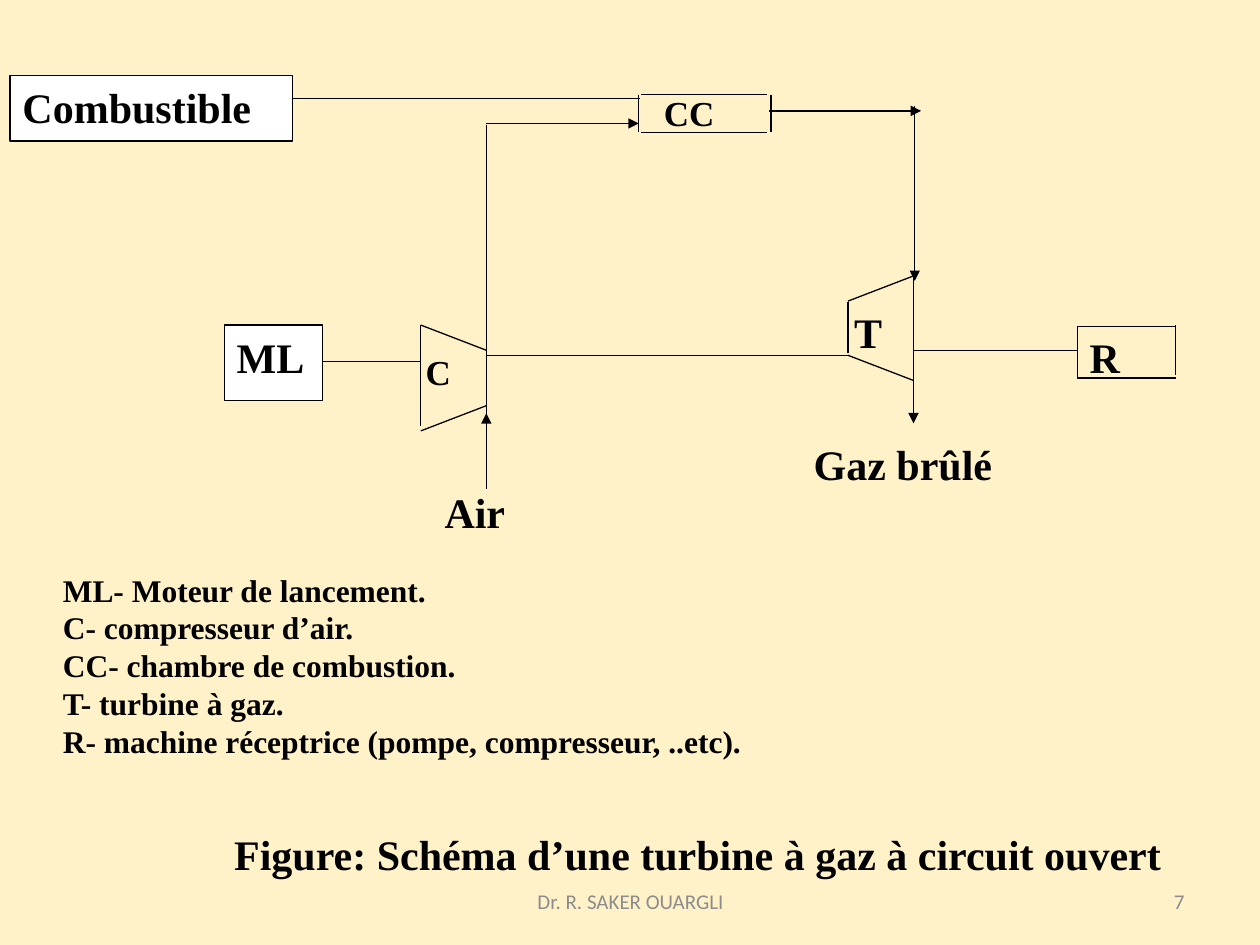
from lxml import etree
from pptx import Presentation
from pptx.dml.color import RGBColor
from pptx.enum.shapes import MSO_CONNECTOR, MSO_SHAPE
from pptx.enum.text import MSO_ANCHOR, PP_ALIGN
from pptx.oxml.ns import qn
from pptx.util import Inches, Pt

STRAIGHT = MSO_CONNECTOR.STRAIGHT
RECTANGLE = MSO_SHAPE.RECTANGLE
TOP, MIDDLE = MSO_ANCHOR.TOP, MSO_ANCHOR.MIDDLE
LEFT, CENTER, RIGHT = PP_ALIGN.LEFT, PP_ALIGN.CENTER, PP_ALIGN.RIGHT
BLACK, WHITE, GRAY, CREAM = "000000", "FFFFFF", "8C8C8C", "FFF2C9"
SERIF, SANS = "Times New Roman", "Calibri"
LEGEND = (
    "ML- Moteur de lancement.",
    "C- compresseur d’air.",
    "CC- chambre de combustion.",
    "T- turbine à gaz.",
    "R- machine réceptrice (pompe, compresseur, ..etc).",
)


def set_color(color_format, value):
    """Give a fill, line or font colour format a hex colour."""
    color_format.rgb = RGBColor.from_string(value)


def add_line(slide, start, end, arrow=False):
    """Draw a thin black line, with an arrowhead at its end if asked."""
    points = [Inches(value) for value in (*start, *end)]
    connector = slide.shapes.add_connector(STRAIGHT, *points)
    connector.line.width = Pt(0.75)
    set_color(connector.line.color, BLACK)
    if arrow:
        line = connector.line._get_or_add_ln()
        etree.SubElement(line, qn("a:tailEnd"), type="triangle")
    etree.SubElement(connector._element.spPr, qn("a:effectLst"))


def write_text(shape, lines, size=24, font=SERIF, color=BLACK, bold=True,
               align=LEFT, anchor=TOP, spacing=None):
    """Fill a shape with one paragraph per line."""
    frame = shape.text_frame
    frame.word_wrap = True
    frame.vertical_anchor = anchor
    frame.text = "\n".join(lines)
    for paragraph in frame.paragraphs:
        paragraph.alignment = align
        paragraph.line_spacing = spacing
        paragraph.font.name = font
        paragraph.font.size = Pt(size)
        paragraph.font.bold = bold
        set_color(paragraph.font.color, color)


def add_text(slide, box, *lines, **style):
    """Add a text box."""
    shape = slide.shapes.add_textbox(*(Inches(value) for value in box))
    write_text(shape, lines, **style)


def add_labelled_box(slide, box, label):
    """Add a white outlined rectangle with a label."""
    shape = slide.shapes.add_shape(RECTANGLE, *(Inches(value) for value in box))
    shape.shadow.inherit = False
    shape.fill.solid()
    set_color(shape.fill.fore_color, WHITE)
    shape.line.width = Pt(0.75)
    set_color(shape.line.color, BLACK)
    write_text(shape, [label])


def draw_trapezoid(slide, box, tall_on_right):
    """Draw the tall side and the two slanted sides of a machine."""
    left, top, width, height = box
    right, bottom = left + width, top + height
    tall, short = (right, left) if tall_on_right else (left, right)
    add_line(slide, (tall, top), (tall, bottom - 0.04))
    add_line(slide, (tall, top), (short, top + 0.2))
    add_line(slide, (tall, bottom), (short, bottom - 0.2))


def draw_compressor(slide, box):
    """Draw the compressor with its air inlet and outlet pipe."""
    left, top, width, height = box
    right, bottom = left + width, top + height
    draw_trapezoid(slide, box, tall_on_right=False)
    add_line(slide, (right, 0.99), (right, bottom - 0.03))
    add_line(slide, (right, bottom + 0.46), (right, bottom - 0.14), arrow=True)
    add_text(slide, (left - 0.06, top + 0.15, 0.78, 0.4), "C", size=20)
    add_text(slide, (left + 0.09, bottom + 0.39, 0.97, 0.6), "Air")


def draw_turbine(slide, box):
    """Draw the turbine with its burnt gas outlet."""
    left, top, width, height = box
    right, bottom = left + width, top + height
    draw_trapezoid(slide, box, tall_on_right=True)
    add_line(slide, (left, top + 0.21), (left, top + 0.61))
    add_line(slide, (right, bottom - 0.06), (right, bottom + 0.34), arrow=True)
    add_text(slide, (left - 0.05, top + 0.19, 0.78, 0.4), "T")
    add_text(slide, (left - 0.37, bottom + 0.41, 1.97, 0.6), "Gaz brûlé")


def draw_chamber(slide, box):
    """Draw the combustion chamber, its sides set apart from its ends."""
    left, top, width, height = box
    right, bottom = left + width, top + height
    for y in (top, bottom):
        add_line(slide, (left + 0.02, y), (right - 0.03, y))
    for x in (left, right):
        add_line(slide, (x, top), (x, bottom))
    add_text(slide, (left + 0.1, top - 0.07, 0.95, 0.4), "CC", size=20)


def draw_receiver(slide, box):
    """Draw the driven machine."""
    left, top, width, height = box
    right, bottom = left + width, top + height
    for y in (top, bottom):
        add_line(slide, (left, y), (right, y))
    add_line(slide, (left, top), (left, bottom - 0.01))
    add_line(slide, (right, top - 0.01), (right, bottom - 0.02))
    add_text(slide, (left, top - 0.01, width, 0.4), "R")


def draw_pipes(slide):
    """Draw the shafts and pipes that join the machines."""
    add_line(slide, (7.25, 2.78), (8.55, 2.78))
    add_line(slide, (6.73, 2.82), (3.86, 2.82))
    add_line(slide, (3.34, 2.87), (2.3, 2.87))
    add_line(slide, (5.08, 0.78), (2.03, 0.78))
    add_line(slide, (3.86, 0.98), (5.07, 0.98), arrow=True)
    add_line(slide, (6.1, 0.88), (7.31, 0.88), arrow=True)
    add_line(slide, (7.26, 0.84), (7.26, 2.23), arrow=True)


def draw_footer(slide, top, height):
    """Add the author and the slide number."""
    style = {"size": 12, "font": SANS, "color": GRAY, "bold": False, "anchor": MIDDLE}
    add_text(slide, (3.42, top, 3.17, height), "Dr. R. SAKER OUARGLI", align=CENTER, **style)
    add_text(slide, (7.17, top, 2.33, height), "7", align=RIGHT, **style)


def main():
    """Build and save the slide."""
    presentation = Presentation()
    presentation.slide_width = Inches(10)
    presentation.slide_height = Inches(7.5)
    slide = presentation.slides.add_slide(presentation.slide_layouts[6])
    slide.background.fill.solid()
    set_color(slide.background.fill.fore_color, CREAM)

    draw_footer(slide, 6.95, 0.4)
    draw_pipes(slide)
    draw_chamber(slide, (5.07, 0.75, 1.05, 0.3))
    draw_turbine(slide, (6.73, 2.19, 0.52, 0.83))
    draw_receiver(slide, (8.55, 2.59, 0.78, 0.41))
    draw_compressor(slide, (3.34, 2.58, 0.52, 0.84))
    add_labelled_box(slide, (1.78, 2.58, 0.78, 0.6), "ML")
    add_labelled_box(slide, (0.08, 0.6, 2.24, 0.52), "Combustible")
    add_text(slide, (0.4, 4.48, 9.21, 1.6), *LEGEND, size=18, spacing=Pt(21.6))
    add_text(slide, (1.76, 6.53, 7.85, 0.48),
             "Figure: Schéma d’une turbine à gaz à circuit ouvert")
    presentation.save("out.pptx")


if __name__ == "__main__":
    main()
